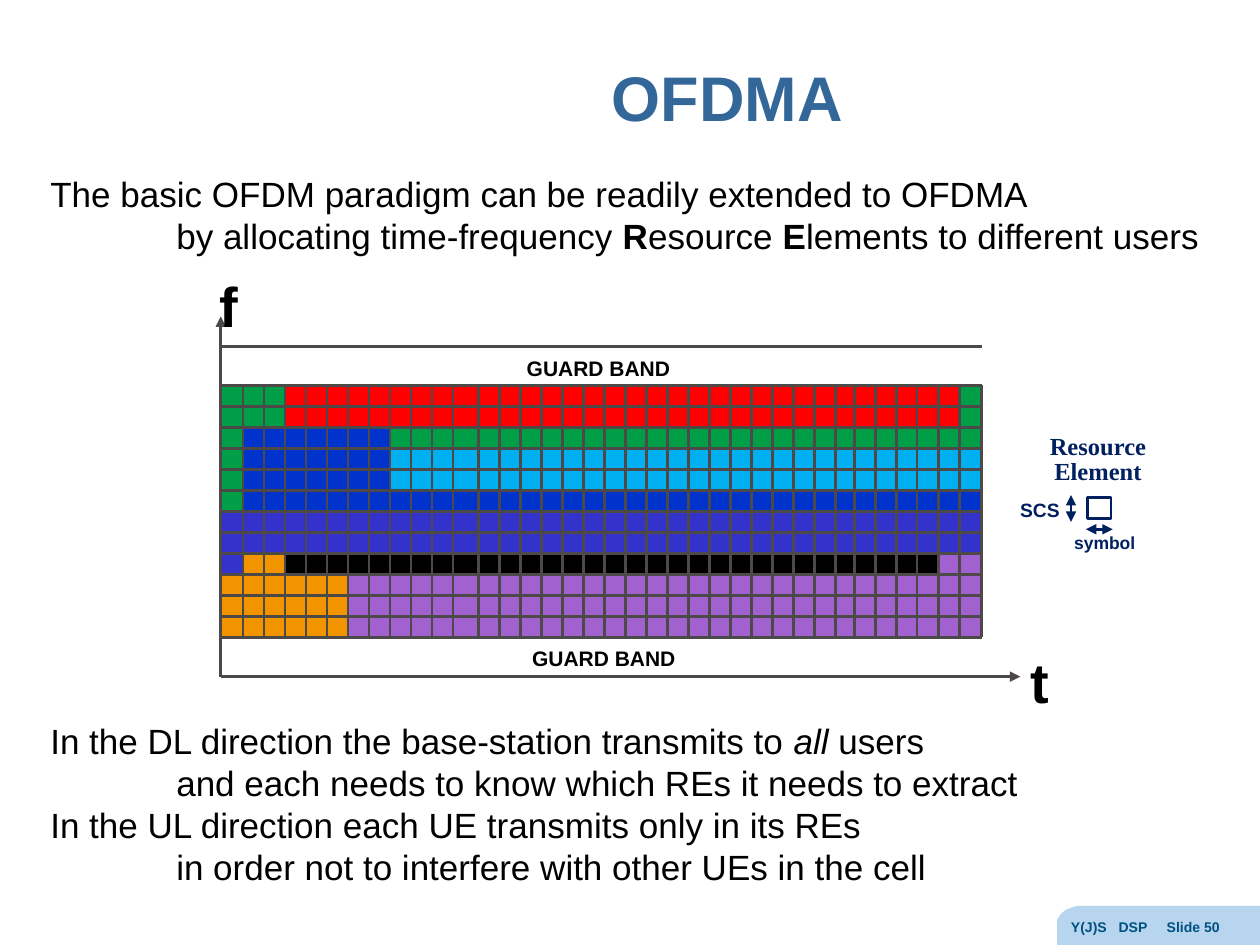
from lxml.etree import SubElement
from pptx import Presentation
from pptx.dml.color import RGBColor
from pptx.enum.shapes import MSO_CONNECTOR, MSO_SHAPE
from pptx.enum.text import MSO_ANCHOR, MSO_AUTO_SIZE as FIT, PP_ALIGN
from pptx.oxml.ns import qn
from pptx.util import Cm, Pt

BLACK = RGBColor(0x00, 0x00, 0x00)
GREY = RGBColor(0x4D, 0x49, 0x48)
NAVY = RGBColor(0x00, 0x20, 0x60)
STEEL = RGBColor(0x33, 0x66, 0x99)
TEAL = RGBColor(0x00, 0x50, 0x81)
PALE = RGBColor(0xB7, 0xD5, 0xEF)
ORANGE = RGBColor(0xF2, 0x94, 0x00)
INDIGO = RGBColor(0x33, 0x33, 0xCC)
GREEN = RGBColor(0x00, 0x9E, 0x47)
ROYAL = RGBColor(0x00, 0x33, 0xCC)
PURPLE = RGBColor(0xA1, 0x62, 0xD0)
SKY = RGBColor(0x00, 0xB0, 0xF0)
RED = RGBColor(0xFF, 0x00, 0x00)

# Content; all lengths are in centimetres
TITLE = "OFDMA"
INTRO = [
    "The basic OFDM paradigm can be readily extended to OFDMA",
    ["by allocating time-frequency ", ("R", "bold"), "esource ",
     ("E", "bold"), "lements to different users"],
]
DIRECTIONS = [
    ["In the DL direction the base-station transmits to ", ("all", "italic"), " users"],
    "and each needs to know which REs it needs to extract",
    "In the UL direction each UE transmits only in its REs",
    "in order not to interfere with other UEs in the cell",
]
BODY_INDENTS = [0, 2.54, 0, 2.54, 0, 2.54]
BODY_GAPS = [6, 0, 264.5, 0, 0, 0]  # points before each line; the diagram fills the large one
FOOTER = [("Y(J)S", 21.34, 1.3), ("DSP", 22.3, 1.3), ("Slide 50", 23.27, 2.1)]  # left, width
FOOTER_OUTLINE = [(25.4, 18.26), (25.4, 19.05), (21.31, 19.05), (21.31, 18.64), (21.31, 18.54),
                  (21.39, 18.42), (21.49, 18.34), (21.62, 18.29), (21.72, 18.26)]

# Resource elements given to each user: colour, first and end column, first and end row
ALLOCATIONS = [
    (ORANGE, 1, 3, 8, 9), (INDIGO, 0, 1, 8, 9), (GREEN, 35, 36, 0, 2),
    (GREEN, 8, 36, 2, 3), (ROYAL, 8, 36, 5, 6), (PURPLE, 6, 36, 9, 12),
    (SKY, 8, 36, 3, 5), (RED, 3, 35, 0, 2), (GREEN, 0, 1, 0, 6),
    (PURPLE, 34, 36, 8, 9), (ORANGE, 0, 6, 9, 12), (BLACK, 3, 34, 8, 9),
    (INDIGO, 0, 36, 6, 8), (ROYAL, 1, 8, 2, 6), (GREEN, 1, 3, 0, 2),
]
LABELS = [  # lines, left, top, width, height, size, colour, font
    (["f"], 4.17, 5.56, 0.53, 0.91, 32, BLACK, "Arial"),
    (["t"], 20.52, 13.13, 0.53, 0.91, 32, BLACK, "Arial"),
    (["GUARD BAND"], 9.18, 12.96, 5.99, 0.69, 12, BLACK, "Arial"),
    (["GUARD BAND"], 9.07, 7.12, 5.99, 0.69, 12, BLACK, "Arial"),
    (["Resource", "Element"], 20.89, 8.66, 2.49, 1.27, 14, NAVY, "Times New Roman"),
    (["SCS"], 20.19, 9.99, 1.55, 0.66, 11, NAVY, "Arial"),
    (["symbol"], 21.37, 10.67, 1.8, 0.61, 10, NAVY, "Arial"),
]

# Grid of column groups that share one pitch
PITCH = 2.54 / 6
LEFT, TOP, ROWS = 4.45, 7.77, 12
COLUMN_GROUPS = [(4.9, 11), (9.65, 18), (17.22, 6), (19.79, 1)]
column_edges = [LEFT] + [start + i * PITCH for start, count in COLUMN_GROUPS for i in range(count)]
row_edges = [TOP + i * PITCH for i in range(ROWS + 1)]
RIGHT, BOTTOM = column_edges[-1], row_edges[-1]
GUARD_TOP, TIME_AXIS = 6.98, 13.64

deck = Presentation()
deck.slide_width, deck.slide_height = Cm(25.4), Cm(19.05)
slide = deck.slides.add_slide(deck.slide_layouts[1])
shapes = slide.shapes


def place(shape, left, top, width, height):
    shape.left, shape.top, shape.width, shape.height = Cm(left), Cm(top), Cm(width), Cm(height)


def write(frame, lines, size=20, color=BLACK, font="Arial", bold=False,
          align=PP_ALIGN.LEFT, spacing=1.0, before=(), indents=(), fit=FIT.NONE):
    """Fill a frame; a line is a string or a list of strings and (text, style) pairs."""
    frame.word_wrap, frame.auto_size = True, fit
    for index, line in enumerate(lines):
        paragraph = frame.add_paragraph() if index else frame.paragraphs[0]
        paragraph.alignment, paragraph.line_spacing = align, spacing
        paragraph.space_before = Pt(before[index] if before else 0)
        properties = paragraph._p.get_or_add_pPr()
        properties.set("marL", str(Cm(indents[index] if indents else 0)))
        properties.set("indent", "0")
        SubElement(properties, qn("a:buNone"))
        for part in [line] if isinstance(line, str) else line:
            text, style = (part, None) if isinstance(part, str) else part
            run = paragraph.add_run()
            run.text = text
            run.font.size, run.font.name = Pt(size), font
            run.font.color.rgb = color
            run.font.bold = bold or style == "bold"
            run.font.italic = style == "italic"


def add_block(left, top, right, bottom, fill=None, line=None):
    block = shapes.add_shape(MSO_SHAPE.RECTANGLE, Cm(left), Cm(top), Cm(right - left), Cm(bottom - top))
    block.shadow.inherit = False
    if fill is None:
        block.fill.background()
    else:
        block.fill.solid()
        block.fill.fore_color.rgb = fill
    if line is None:
        block.line.fill.background()
    else:
        block.line.color.rgb, block.line.width = line, Pt(1.5)


def add_line(x1, y1, x2, y2, color=GREY, arrows=()):
    line = shapes.add_connector(MSO_CONNECTOR.STRAIGHT, Cm(x1), Cm(y1), Cm(x2), Cm(y2))
    line.line.color.rgb, line.line.width = color, Pt(1.5)
    for end in arrows:
        SubElement(line.line._get_or_add_ln(), qn(f"a:{end}"), type="triangle")
    SubElement(line._element.spPr, qn("a:effectLst"))


def add_label(lines, left, top, width, height, **style):
    box = shapes.add_textbox(Cm(left), Cm(top), Cm(width), Cm(height))
    write(box.text_frame, lines, bold=True, **style)


title, body = slide.placeholders
place(title, 5.38, 0.44, 18.57, 3.18)
title.text_frame.vertical_anchor = MSO_ANCHOR.MIDDLE
write(title.text_frame, [TITLE], size=36, color=STEEL, bold=True, align=PP_ALIGN.CENTER, spacing=0.9)
place(body, 0.76, 3.35, 24.64, 13.72)
write(body.text_frame, INTRO + DIRECTIONS, before=BODY_GAPS, indents=BODY_INDENTS)

for color, col, end_col, row, end_row in ALLOCATIONS:
    add_block(column_edges[col], row_edges[row], column_edges[end_col], row_edges[end_row], fill=color)

add_line(LEFT, TIME_AXIS, 20.57, TIME_AXIS, arrows=["tailEnd"])
add_line(LEFT, TIME_AXIS, LEFT, 6.38, arrows=["tailEnd"])
for y in [GUARD_TOP] + row_edges:
    add_line(LEFT, y, RIGHT, y)
for x in column_edges[1:]:
    add_line(x, TOP, x, BOTTOM)

add_block(21.92, 10.03, 22.4, 10.46, line=NAVY)
add_line(21.59, 9.98, 21.59, 10.52, NAVY, ["headEnd", "tailEnd"])
add_line(21.89, 10.67, 22.43, 10.67, NAVY, ["headEnd", "tailEnd"])
for lines, left, top, width, height, size, color, font in LABELS:
    add_label(lines, left, top, width, height, size=size, color=color, font=font,
              align=PP_ALIGN.CENTER, spacing=0.85, fit=FIT.SHAPE_TO_FIT_TEXT)

outline = [(Cm(x), Cm(y)) for x, y in FOOTER_OUTLINE]
builder = shapes.build_freeform(*outline[0])
builder.add_line_segments(outline[1:], close=True)
footer_tab = builder.convert_to_shape()
footer_tab.shadow.inherit = False
footer_tab.fill.solid()
footer_tab.fill.fore_color.rgb = PALE
footer_tab.line.fill.background()
for text, left, width in FOOTER:
    add_label([text], left, 18.39, width, 0.66, size=8, color=TEAL)

deck.save("out.pptx")
